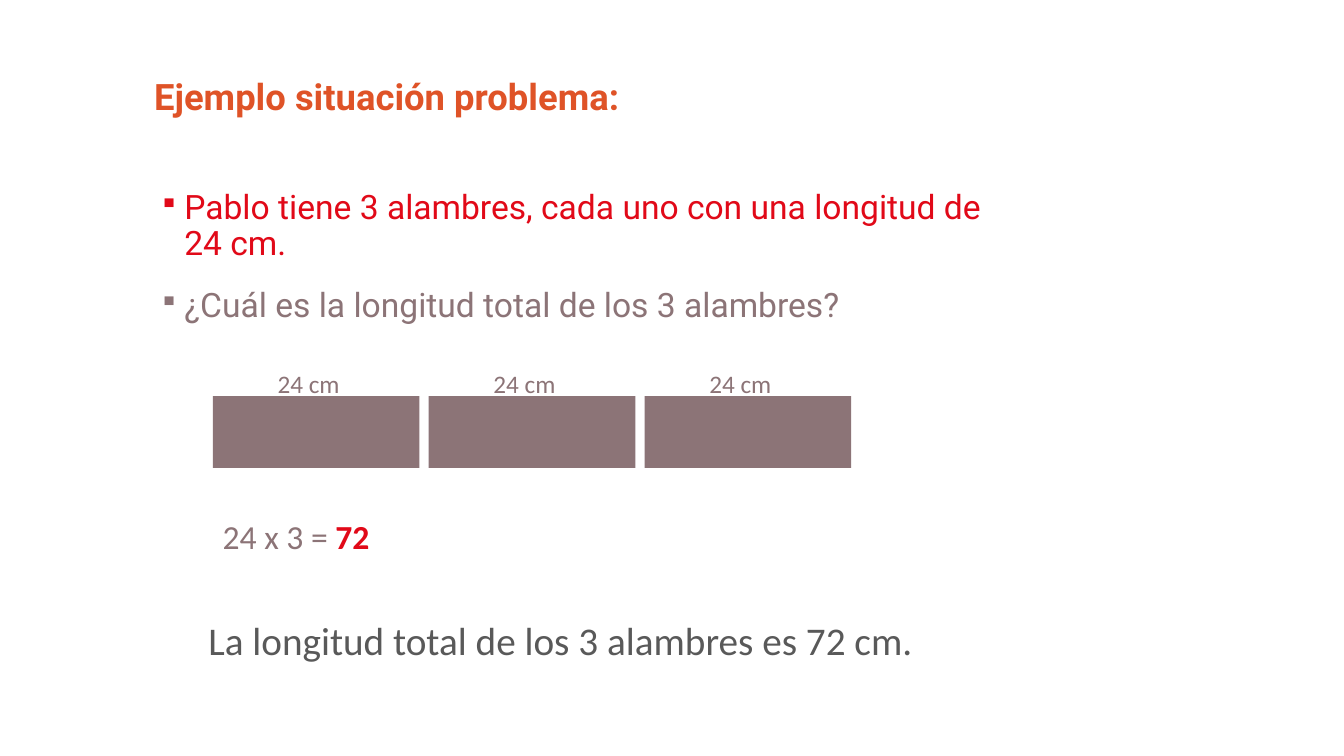
from lxml.etree import SubElement
from pptx import Presentation
from pptx.dml.color import RGBColor
from pptx.enum.shapes import MSO_SHAPE
from pptx.enum.text import MSO_ANCHOR
from pptx.oxml.ns import qn
from pptx.util import Pt

COLORS = {
    "orange": "DF5327",
    "red": "E10918",
    "mauve": "8C7477",
    "gray": "595959",
    "white": "FFFFFF",
}

# Each paragraph is a list of runs: (text, color, bold)
TITLE = [[("Ejemplo situación problema:", "orange", True)]]
PROBLEM = [
    [("Pablo tiene 3 alambres, cada uno con una longitud de 24 cm.", "red", False)],
    [("¿Cuál es la longitud total de los 3 alambres?", "mauve", False)],
]
WIRES = ["24 cm", "24 cm", "24 cm"]
OPERATION = [[("24 x 3 = ", "mauve", False), ("72", "red", True)]]
ANSWER = [[("La longitud total de los 3 alambres es 72 cm.", "gray", False)]]

WIRE_LEFT, WIRE_TOP, WIRE_WIDTH, WIRE_HEIGHT = 152, 283, 147.6, 51.2
WIRE_STEP = 154.2
LABEL_WIDTH, LABEL_HEIGHT, LABEL_RISE = 59, 28.8, 23.8
LABEL_SHIFT = 39.2


def color(name):
    return RGBColor.from_string(COLORS[name])


def add_text(slide, box, paragraphs, font, size, line_spacing=1.0, wrap=True,
             anchor=MSO_ANCHOR.TOP, bullet=None):
    shape = slide.shapes.add_textbox(*map(Pt, box))
    frame = shape.text_frame
    frame.word_wrap = wrap
    frame.vertical_anchor = anchor
    for index, runs in enumerate(paragraphs):
        paragraph = frame.paragraphs[0] if index == 0 else frame.add_paragraph()
        paragraph.line_spacing = line_spacing
        if index:
            paragraph.space_before = Pt(18)
        if bullet:
            add_bullet(paragraph, bullet)
        for text, color_name, bold in runs:
            run = paragraph.add_run()
            run.text = text
            run.font.color.rgb = color(color_name)
            formats = {"name": font, "size": Pt(size), "bold": bold}
            for key, value in formats.items():
                setattr(run.font, key, value)
    return shape


def add_bullet(paragraph, character):
    properties = paragraph._p.get_or_add_pPr()
    properties.set("marL", str(Pt(21.6)))
    properties.set("indent", str(-Pt(18)))
    SubElement(properties, qn("a:buSzPct"), val="80000")
    SubElement(properties, qn("a:buChar"), char=character)


def add_wire(slide, left, label):
    bar = slide.shapes.add_shape(
        MSO_SHAPE.RECTANGLE, Pt(left), Pt(WIRE_TOP), Pt(WIRE_WIDTH), Pt(WIRE_HEIGHT))
    bar.shadow.inherit = False
    bar.fill.solid()
    bar.fill.fore_color.rgb = color("mauve")
    bar.line.fill.background()
    label_box = (left + LABEL_SHIFT, WIRE_TOP - LABEL_RISE, LABEL_WIDTH, LABEL_HEIGHT)
    add_text(slide, label_box, [[(label, "mauve", False)]], "Calibri", 18, wrap=False)


def main():
    presentation = Presentation()
    presentation.slide_width, presentation.slide_height = Pt(960), Pt(540)
    slide = presentation.slides.add_slide(presentation.slide_layouts[6])

    add_text(slide, (103, 19.4, 582.5, 68.4), TITLE, "Roboto", 26, 0.9,
             anchor=MSO_ANCHOR.BOTTOM)
    add_text(slide, (103, 132.5, 628, 118.8), PROBLEM, "Roboto", 24, 0.9, bullet="▪")
    for index, label in enumerate(WIRES):
        add_wire(slide, WIRE_LEFT + index * WIRE_STEP, label)
    operation = add_text(slide, (WIRE_LEFT, 365, 125.3, 36), OPERATION, "Calibri", 24,
                         wrap=False)
    operation.fill.solid()
    operation.fill.fore_color.rgb = color("white")
    add_text(slide, (141.8, 413.3, 519.8, 62.6), ANSWER, "Calibri", 28, 1.7)

    presentation.save("out.pptx")


if __name__ == "__main__":
    main()
